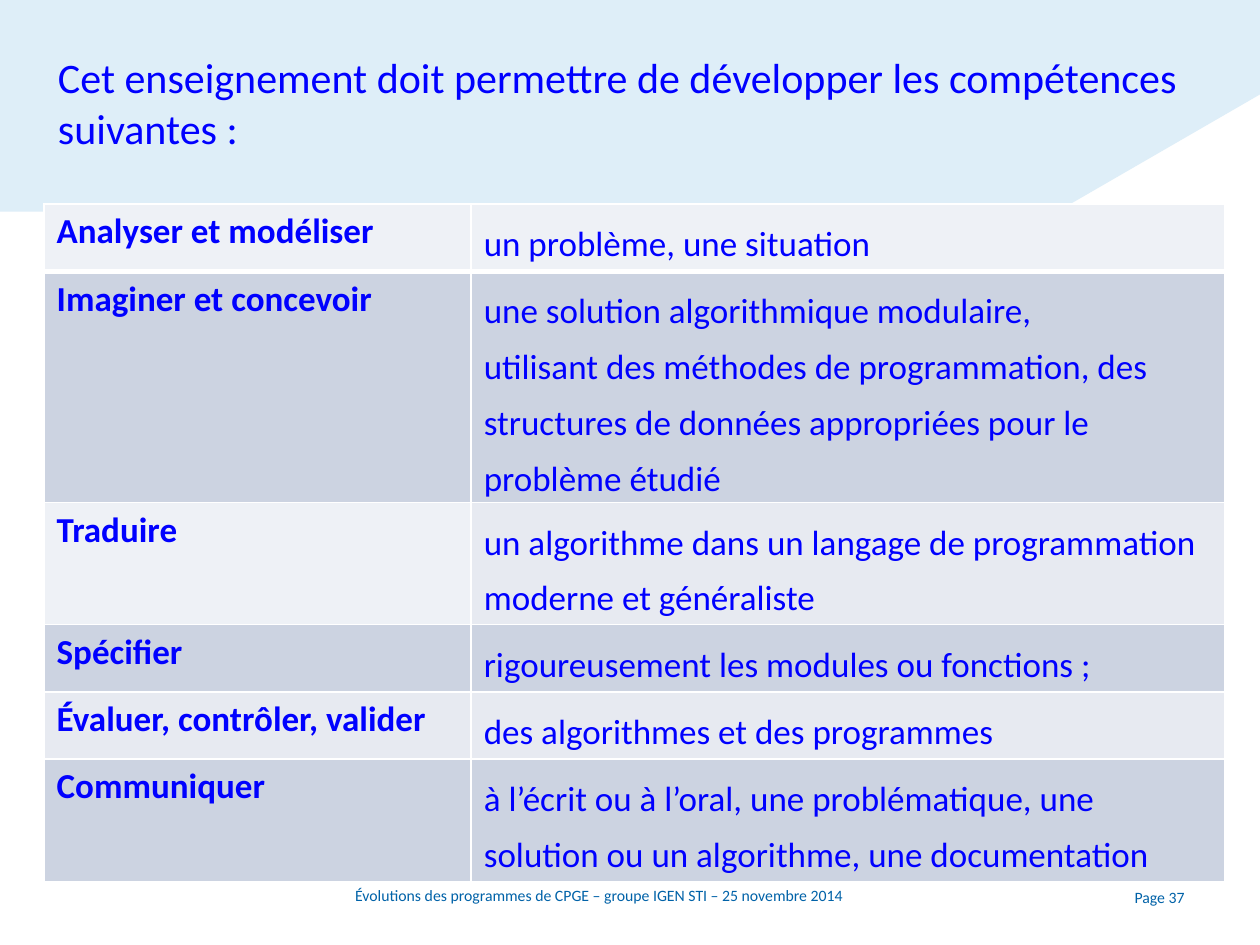
"""Build the slide listing the skills that computer science teaching develops."""
from dataclasses import dataclass

from lxml.etree import SubElement
from pptx import Presentation
from pptx.dml.color import RGBColor
from pptx.enum.text import MSO_ANCHOR as Anchor, MSO_AUTO_SIZE as Auto, PP_ALIGN as Align
from pptx.oxml.ns import qn
from pptx.util import Inches, Pt

W, H = Inches(10), Inches(7.5)


@dataclass(frozen=True)
class Theme:
    font: str = "Calibri"
    text: str = "0000FF"
    footer: str = "0062A8"
    banner: str = "DEEEF8"
    border: str = "FFFFFF"
    light: str = "EEF1F6"
    pale: str = "E7EAF1"
    dark: str = "CCD3E1"
    title_size: int = 24
    body_size: int = 20
    footer_size: int = 9
    spacing: float = 1.3
    thin: int = 1
    thick: int = 3


T = Theme()


@dataclass(frozen=True)
class Box:
    x: float
    y: float
    w: float
    h: float

    def emu(self) -> tuple:
        return int(self.x * W), int(self.y * H), int(self.w * W), int(self.h * H)


@dataclass(frozen=True)
class Skill:
    name: str
    details: tuple
    height: float
    fills: tuple


@dataclass(frozen=True)
class Footer:
    text: str
    box: Box
    frame: dict
    align: Align


SKILLS = (
    Skill("Analyser et modéliser", ("un problème, une situation",), 0.53, (T.light, T.light)),
    Skill("Imaginer et concevoir",
          ("une solution algorithmique modulaire,",
           "utilisant des méthodes de programmation, des structures de données "
           "appropriées pour le problème étudié"), 1.83, (T.dark, T.dark)),
    Skill("Traduire",
          ("un algorithme dans un langage de programmation moderne et généraliste",),
          0.97, (T.light, T.pale)),
    Skill("Spécifier", ("rigoureusement les modules ou fonctions ;",), 0.53, (T.dark, T.dark)),
    Skill("Évaluer, contrôler, valider", ("des algorithmes et des programmes",),
          0.53, (T.pale, T.pale)),
    Skill("Communiquer",
          ("à l’écrit ou à l’oral, une problématique, une",
           "solution ou un algorithme, une documentation"), 0.97, (T.dark, T.dark)),
)
FOOTERS = (
    Footer("Évolutions des programmes de CPGE – groupe IGEN STI – 25 novembre 2014",
           Box(0.272, 0.931, 0.591, 0.053),
           {"auto_size": Auto.SHAPE_TO_FIT_TEXT, "vertical_anchor": Anchor.TOP}, Align.LEFT),
    Footer("Page 37", Box(0.862, 0.927, 0.088, 0.045),
           {"auto_size": Auto.NONE, "vertical_anchor": Anchor.MIDDLE}, Align.RIGHT),
)
TITLE = "Cet enseignement doit permettre de développer les compétences suivantes :"
TITLE_BOX = Box(0.036, 0.048, 0.936, 0.336)
TABLE_BOX = Box(0.035, 0.216, 0.937, 0.715)
COLUMNS = (0.339, 0.598)
BANNER = ((1, 0), (0, 0), (0, 0.224), (0.839, 0.224), (1, 0.1))


def apply(obj, **values) -> None:
    for name, value in values.items():
        setattr(obj, name, value)


def write(tf, lines: tuple, size: int, color: str, bold: bool = False, **para) -> None:
    for i, line in enumerate(lines):
        p = tf.paragraphs[0] if i == 0 else tf.add_paragraph()
        apply(p, **para)
        r = p.add_run()
        r.text = line
        apply(r.font, name=T.font, size=Pt(size), bold=bold)
        r.font.color.rgb = RGBColor.from_string(color)


def add_banner(s) -> None:
    points = [(int(x * W), int(y * H)) for x, y in BANNER]
    builder = s.shapes.build_freeform(*points[0])
    builder.add_line_segments(points[1:], close=True)
    sp = builder.convert_to_shape()
    sp.shadow.inherit = False
    sp.fill.solid()
    sp.fill.fore_color.rgb = RGBColor.from_string(T.banner)
    sp.line.fill.background()
    s.shapes.title.element.addprevious(sp.element)


def add_title(s) -> None:
    sp = s.shapes.title
    apply(sp, **dict(zip(("left", "top", "width", "height"), TITLE_BOX.emu())))
    apply(sp.text_frame, word_wrap=True, auto_size=Auto.NONE, vertical_anchor=Anchor.TOP)
    write(sp.text_frame, (TITLE,), T.title_size, T.text, alignment=Align.LEFT)


def add_footer(s, footer: Footer) -> None:
    tf = s.shapes.add_textbox(*footer.box.emu()).text_frame
    apply(tf, word_wrap=True, **footer.frame)
    write(tf, (footer.text,), T.footer_size, T.footer, alignment=footer.align)


def format_cell(cell, fill: str, widths: dict) -> None:
    tc_pr = cell._tc.get_or_add_tcPr()
    for side, width in widths.items():
        ln = SubElement(tc_pr, qn(f"a:ln{side}"), w=str(Pt(width)))
        SubElement(SubElement(ln, qn("a:solidFill")), qn("a:srgbClr"), val=T.border)
    cell.fill.solid()
    cell.fill.fore_color.rgb = RGBColor.from_string(fill)


def add_skills(s) -> None:
    table = s.shapes.add_table(len(SKILLS), len(COLUMNS), *TABLE_BOX.emu()).table
    apply(table, first_row=False, horz_banding=False)
    for column, share in zip(table.columns, COLUMNS):
        column.width = int(share * W)
    for i, (row, skill) in enumerate(zip(table.rows, SKILLS)):
        row.height = Inches(skill.height)
        widths = {"L": T.thin, "R": T.thin,
                  "T": T.thick if i == 1 else T.thin,
                  "B": T.thick if i == 0 else T.thin}
        for cell, fill in zip(row.cells, skill.fills):
            format_cell(cell, fill, widths)
        name, details = row.cells
        write(name.text_frame, (skill.name,), T.body_size, T.text, bold=True)
        write(details.text_frame, skill.details, T.body_size, T.text, line_spacing=T.spacing)


def main() -> None:
    prs = Presentation()
    apply(prs, slide_width=W, slide_height=H)
    s = prs.slides.add_slide(prs.slide_layouts[5])
    add_title(s)
    add_banner(s)
    for footer in FOOTERS:
        add_footer(s, footer)
    add_skills(s)
    prs.save("out.pptx")


if __name__ == "__main__":
    main()
